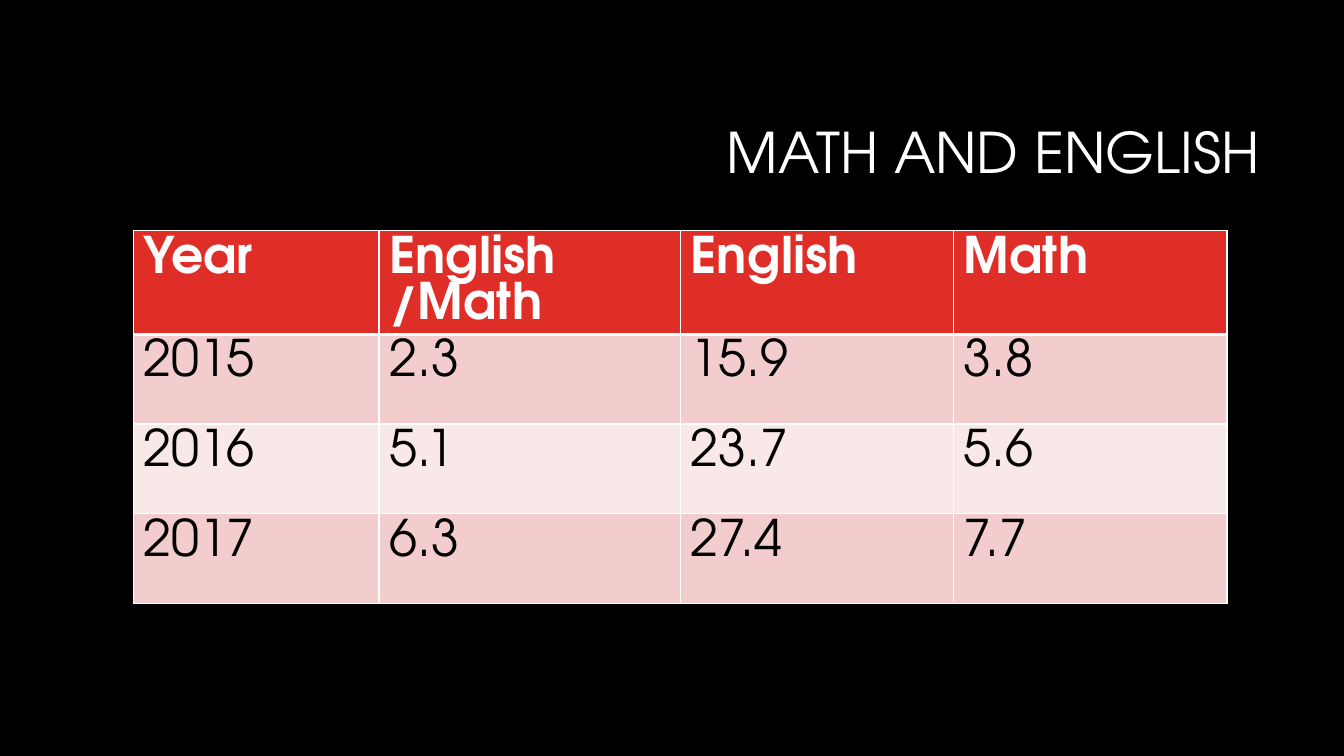
from lxml.etree import SubElement
from pptx import Presentation
from pptx.dml.color import RGBColor
from pptx.enum.text import MSO_ANCHOR, PP_ALIGN
from pptx.oxml.ns import qn
from pptx.util import Inches, Pt

# Content
TITLE = "MATH AND ENGLISH"
ROWS = [
    ("Year", "English /Math", "English", "Math"),
    ("2015", "2.3", "15.9", "3.8"),
    ("2016", "5.1", "23.7", "5.6"),
    ("2017", "6.3", "27.4", "7.7"),
]

# Layout in inches
SLIDE_W, SLIDE_H = 13.33, 7.5
TITLE_BOX = (3.17, 0.84, 9.42, 1.41)
TABLE_LEFT, TABLE_TOP = 1.32, 2.29
COL_WIDTHS = (2.44, 2.99, 2.71, 2.71)
ROW_HEIGHT = 0.89

# Style
FONT = "TeX Gyre Adventor"
BLACK = RGBColor(0x00, 0x00, 0x00)
WHITE = RGBColor(0xFF, 0xFF, 0xFF)
RED = RGBColor(0xDF, 0x2E, 0x28)
BANDS = (RGBColor(0xF9, 0xE8, 0xE8), RGBColor(0xF3, 0xCD, 0xCD))


def write(tf, text, size, color, bold=False, align=PP_ALIGN.LEFT, spacing=None):
    p = tf.paragraphs[0]
    p.alignment = align
    p.line_spacing = spacing
    r = p.add_run()
    r.text = text
    r.font.name, r.font.size, r.font.bold = FONT, Pt(size), bold
    r.font.color.rgb = color


def set_borders(cell, **widths):
    tc_pr = cell._tc.get_or_add_tcPr()
    for i, side in enumerate(("lnL", "lnR", "lnT", "lnB")):
        ln = SubElement(tc_pr, qn(f"a:{side}"), w=str(Pt(widths.get(side, 1))))
        fill = SubElement(ln, qn("a:solidFill"))
        SubElement(fill, qn("a:srgbClr"), val=str(WHITE))
        tc_pr.remove(ln)
        tc_pr.insert(i, ln)  # borders come before the fill


prs = Presentation()
prs.slide_width, prs.slide_height = Inches(SLIDE_W), Inches(SLIDE_H)
slide = prs.slides.add_slide(prs.slide_layouts[6])
slide.background.fill.solid()
slide.background.fill.fore_color.rgb = BLACK

# Score table
table = slide.shapes.add_table(
    len(ROWS), len(COL_WIDTHS), Inches(TABLE_LEFT), Inches(TABLE_TOP),
    Inches(sum(COL_WIDTHS)), Inches(ROW_HEIGHT * len(ROWS))).table
for column, width in zip(table.columns, COL_WIDTHS):
    column.width = Inches(width)
for i, values in enumerate(ROWS):
    header = i == 0
    table.rows[i].height = Inches(ROW_HEIGHT)
    for j, value in enumerate(values):
        cell = table.cell(i, j)
        cell.fill.solid()
        cell.fill.fore_color.rgb = RED if header else BANDS[i % 2]
        set_borders(cell, lnT=3 if i == 1 else 1, lnB=3 if header else 1)
        write(cell.text_frame, value, 36, WHITE if header else BLACK, bold=header)

# Title
tf = slide.shapes.add_textbox(*map(Inches, TITLE_BOX)).text_frame
tf.word_wrap = True
tf.vertical_anchor = MSO_ANCHOR.MIDDLE
write(tf, TITLE, 40, WHITE, align=PP_ALIGN.RIGHT, spacing=0.9)

prs.save("out.pptx")
